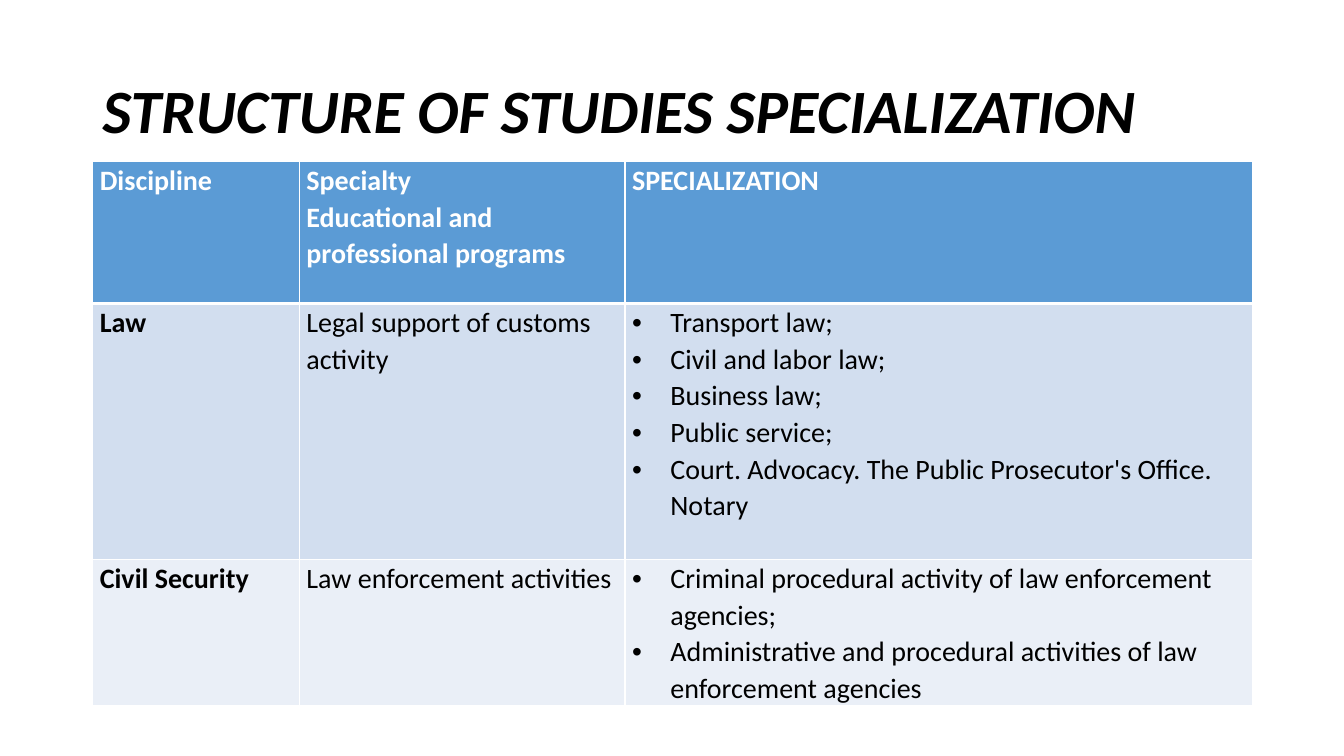
from lxml import etree
from pptx import Presentation
from pptx.dml.color import RGBColor
from pptx.enum.text import MSO_ANCHOR
from pptx.oxml.ns import qn
from pptx.util import Inches, Pt

MIDDLE = MSO_ANCHOR.MIDDLE
WIDTH, HEIGHT = 13.33, 7.5
LEFT, CONTENT_WIDTH = 0.92, 11.5
TABLE_TOP = 1.6
COLUMN_WIDTHS = (2.05, 3.23, 6.22)
ROW_HEIGHTS = (1.41, 2.54, 1.45)
CELL_MARGINS = {"margin_left": Inches(0.07), "margin_right": Inches(0.07),
                "margin_top": 0, "margin_bottom": 0}
BULLET_INDENT = Inches(0.38)
WHITE, BLACK = "FFFFFF", "000000"
ROW_FILLS = ("5B9BD5", "D2DEEF", "EAEFF7")

TITLE = "STRUCTURE OF STUDIES SPECIALIZATION"
HEADINGS = (
    ["Discipline"],
    ["Specialty", "Educational and professional programs"],
    ["SPECIALIZATION"],
)
PROGRAMS = (
    (["Law"], ["Legal support of customs activity"], [
        "Transport law;",
        "Civil and labor law;",
        "Business law;",
        "Public service;",
        "Court. Advocacy. The Public Prosecutor's Office. Notary",
    ]),
    (["Civil Security"], ["Law enforcement activities"], [
        "Criminal procedural activity of law enforcement agencies;",
        "Administrative and procedural activities of law enforcement agencies",
    ]),
)


def rgb(value):
    return RGBColor.from_string(value)


def write_paragraph(paragraph, text, color, spacing, **font_format):
    paragraph.line_spacing = spacing
    run = paragraph.add_run()
    run.text = text
    run.font.color.rgb = rgb(color)
    for attribute, value in {"name": "Calibri", **font_format}.items():
        setattr(run.font, attribute, value)


def add_bullet(paragraph):
    properties = paragraph._p.get_or_add_pPr()
    properties.set("marL", str(BULLET_INDENT))
    properties.set("indent", str(-BULLET_INDENT))
    etree.SubElement(properties, qn("a:buFont"), typeface="Arial")
    etree.SubElement(properties, qn("a:buChar"), char="•")


def add_borders(cell, **widths):
    properties = cell._tc.get_or_add_tcPr()
    for side in "LRTB":
        line = etree.SubElement(properties, qn(f"a:ln{side}"),
                                w=str(Pt(widths.get(side, 1))))
        fill = etree.SubElement(line, qn("a:solidFill"))
        etree.SubElement(fill, qn("a:srgbClr"), val=WHITE)


def fill_cell(cell, lines, fill, color, bold, bulleted, borders):
    for attribute, value in CELL_MARGINS.items():
        setattr(cell, attribute, value)
    add_borders(cell, **borders)
    cell.fill.solid()
    cell.fill.fore_color.rgb = rgb(fill)
    frame = cell.text_frame
    for index, line in enumerate(lines):
        paragraph = frame.add_paragraph() if index else frame.paragraphs[0]
        write_paragraph(paragraph, line, color, 1.07, size=Pt(20), bold=bold)
        if bulleted:
            add_bullet(paragraph)


def add_title(slide):
    box = slide.shapes.add_textbox(Inches(LEFT), Inches(0.4),
                                   Inches(CONTENT_WIDTH), Inches(1.45))
    frame = box.text_frame
    frame.word_wrap = True
    frame.vertical_anchor = MIDDLE
    write_paragraph(frame.paragraphs[0], TITLE, BLACK, 0.9,
                    size=Pt(44), bold=True, italic=True)


def add_specialization_table(slide):
    rows = (HEADINGS, *PROGRAMS)
    table = slide.shapes.add_table(
        len(rows), len(COLUMN_WIDTHS), Inches(LEFT), Inches(TABLE_TOP),
        Inches(CONTENT_WIDTH), Inches(sum(ROW_HEIGHTS))).table
    for column, width in zip(table.columns, COLUMN_WIDTHS):
        column.width = Inches(width)
    for row, height in zip(table.rows, ROW_HEIGHTS):
        row.height = Inches(height)

    for row_index, contents in enumerate(rows):
        heading = row_index == 0
        borders = {0: {"B": 3}, 1: {"T": 3}}.get(row_index, {})
        for column_index, lines in enumerate(contents):
            fill_cell(table.cell(row_index, column_index), lines,
                      fill=ROW_FILLS[row_index],
                      color=WHITE if heading else BLACK,
                      bold=heading or column_index == 0,
                      bulleted=not heading and column_index == 2,
                      borders=borders)


def main():
    presentation = Presentation()
    presentation.slide_width = Inches(WIDTH)
    presentation.slide_height = Inches(HEIGHT)
    slide = presentation.slides.add_slide(presentation.slide_layouts[6])
    add_title(slide)
    add_specialization_table(slide)
    presentation.save("out.pptx")


if __name__ == "__main__":
    main()
